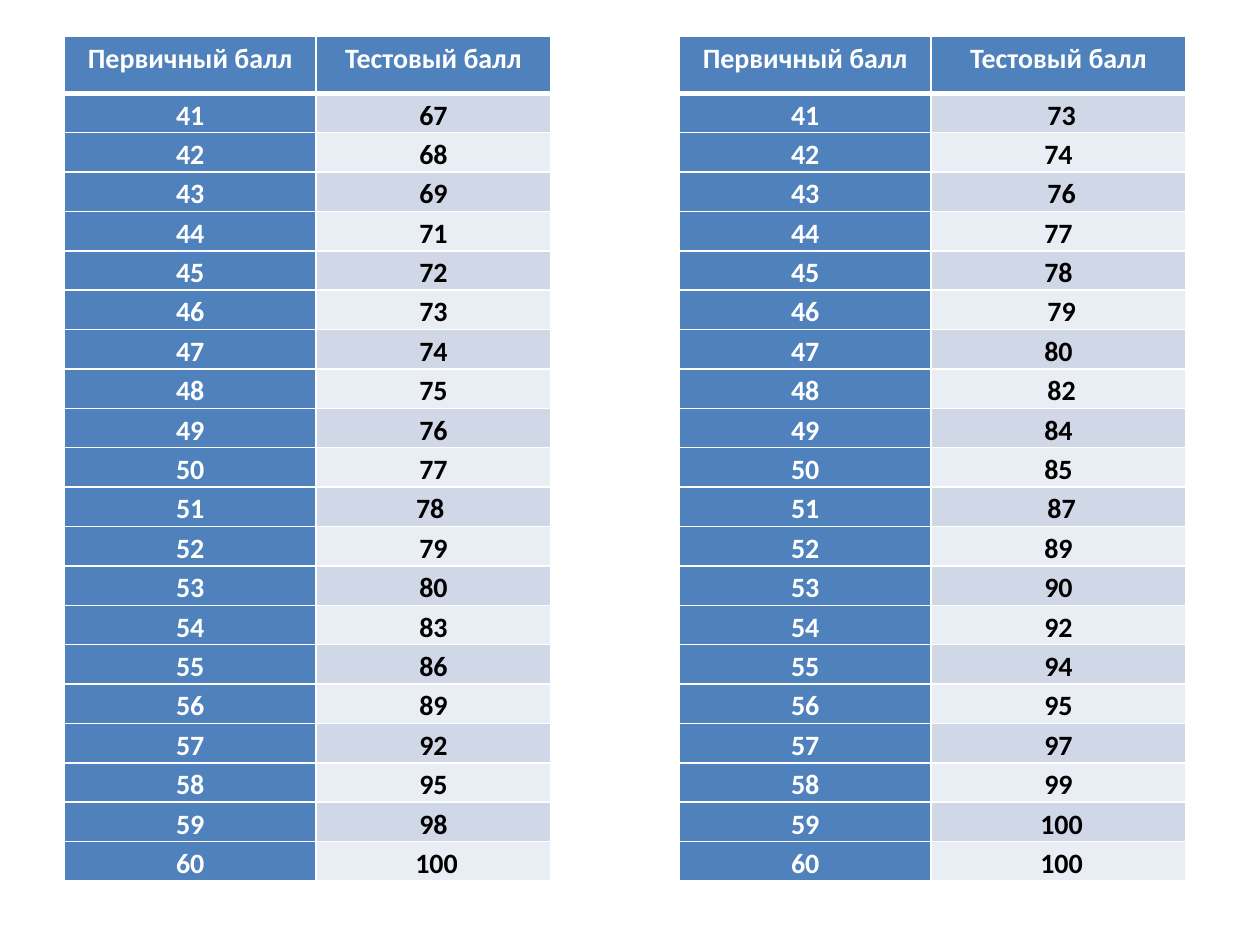
from pptx import Presentation
from pptx.dml.color import RGBColor
from pptx.enum.text import MSO_ANCHOR, PP_ALIGN
from pptx.oxml.ns import qn
from pptx.util import Inches, Pt
from lxml import etree

CENTER = PP_ALIGN.CENTER
TOP = MSO_ANCHOR.TOP
COLORS = {
    "blue": "4F81BD",
    "band_dark": "D0D8E8",
    "band_light": "E9EDF4",
    "white": "FFFFFF",
    "black": "000000",
}
HEADINGS = ("Первичный балл", "Тестовый балл")
FIRST_PRIMARY = 41
SCALES = [
    (0.51, 1.86, [
        " 67 ", " 68 ", " 69 ", " 71 ", " 72 ", " 73 ", " 74 ", " 75 ", " 76 ", " 77 ",
        "78 ", " 79 ", " 80 ", " 83 ", " 86 ", " 89 ", " 92 ", " 95 ", " 98 ", " 100",
    ]),
    (5.39, 2.02, [
        " 73", " 74 ", " 76", " 77 ", " 78 ", " 79", " 80 ", " 82", " 84 ", " 85 ",
        " 87", " 89 ", " 90 ", " 92 ", " 94 ", " 95 ", " 97 ", " 99 ", " 100", " 100",
    ]),
]


def write_text(cell, text, color="white", size=16, bold=True, font="Calibri"):
    cell.margin_left = cell.margin_right = Inches(0.07)
    cell.margin_top = cell.margin_bottom = 0
    cell.vertical_anchor = TOP
    paragraph = cell.text_frame.paragraphs[0]
    paragraph.alignment = CENTER
    paragraph.line_spacing = 1.15
    run = paragraph.add_run()
    run.text = text
    run.font.name = font
    run.font.size = Pt(size)
    run.font.bold = bold
    run.font.color.rgb = RGBColor.from_string(COLORS[color])


def paint_cell(cell, fill, top=1, bottom=1):
    properties = cell._tc.get_or_add_tcPr()
    for side, width in (("L", 1), ("R", 1), ("T", top), ("B", bottom)):
        border = etree.SubElement(properties, qn(f"a:ln{side}"), w=str(Pt(width)))
        solid = etree.SubElement(border, qn("a:solidFill"))
        etree.SubElement(solid, qn("a:srgbClr"), val=COLORS["white"])
    cell.fill.solid()
    cell.fill.fore_color.rgb = RGBColor.from_string(COLORS[fill])


presentation = Presentation()
presentation.slide_width = Inches(10)
presentation.slide_height = Inches(7.5)
slide = presentation.slides.add_slide(presentation.slide_layouts[6])

for left, test_width, test_scores in SCALES:
    scale = slide.shapes.add_table(
        len(test_scores) + 1, 2,
        Inches(left), Inches(0.29), Inches(2 + test_width), Inches(6.22),
    ).table
    scale.columns[0].width = Inches(2)
    scale.columns[1].width = Inches(test_width)
    for row in scale.rows:
        row.height = Inches(0.22)
    scale.rows[0].height = Inches(0.45)

    for column, heading in enumerate(HEADINGS):
        write_text(scale.cell(0, column), heading)
        paint_cell(scale.cell(0, column), "blue", bottom=3)

    for row, test_score in enumerate(test_scores, start=1):
        top = 3 if row == 1 else 1
        primary = scale.cell(row, 0)
        write_text(primary, str(FIRST_PRIMARY + row - 1))
        paint_cell(primary, "blue", top=top)
        test = scale.cell(row, 1)
        write_text(test, test_score, color="black")
        paint_cell(test, "band_dark" if row % 2 else "band_light", top=top)

presentation.save("out.pptx")
